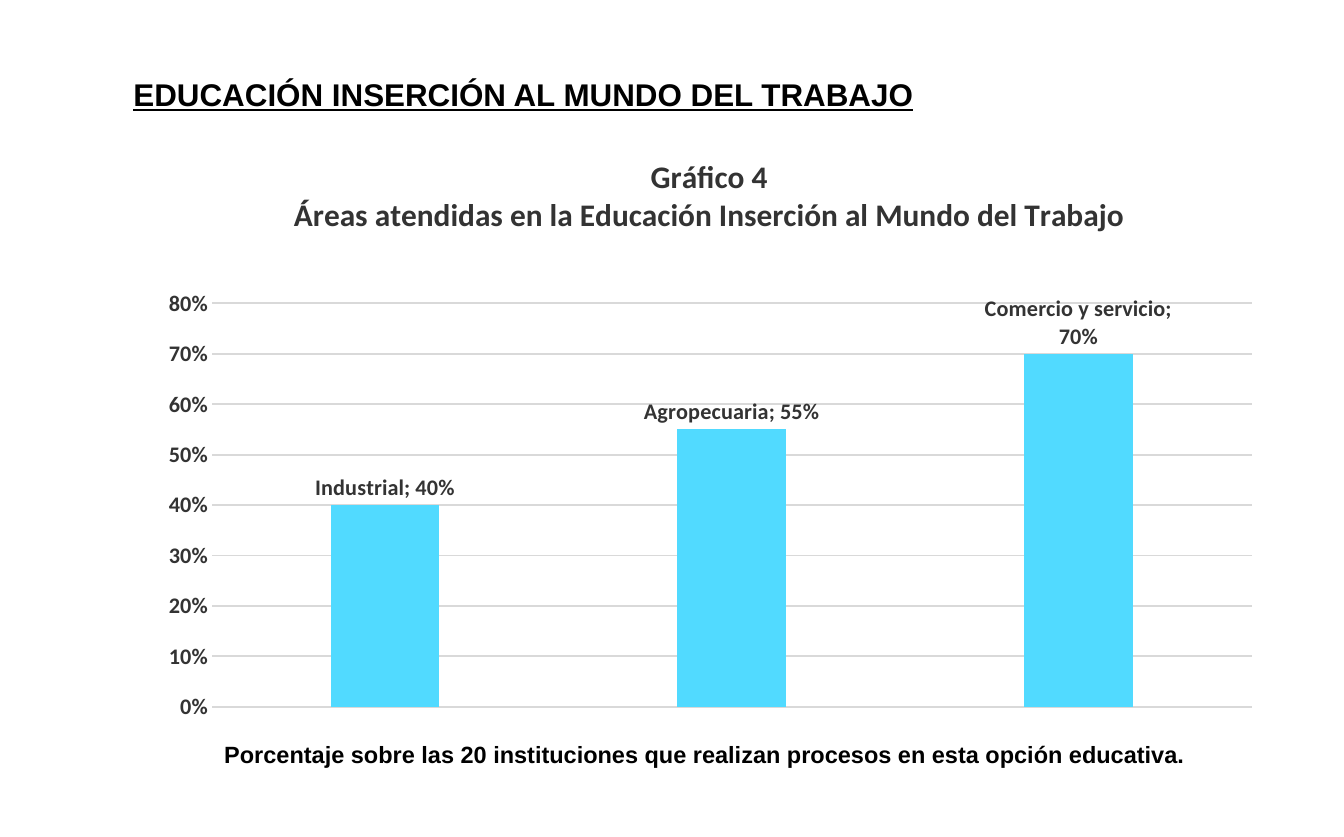
import pptx
import pptx.chart.data
import pptx.dml.color
import pptx.enum.chart
import pptx.enum.text
import pptx.oxml
import pptx.util
from dataclasses import dataclass

Inches = pptx.util.Inches
Pt = pptx.util.Pt


@dataclass(frozen=True)
class Theme:
    text_font: str = "Arial"
    chart_font: str = "Calibri"
    ink: str = "000000"
    chart_ink: str = "333333"
    bar: str = "51DAFF"
    grid: str = "D9D9D9"
    heading_size: float = 24
    caption_size: float = 18
    label_size: float = 17
    grid_width: float = 1.41


class SlideBuilder:
    def __init__(self, slide, theme):
        self.slide = slide
        self.theme = theme

    def style(self, font, name, size, color):
        font.name = name
        font.size = Pt(size)
        font.bold = True
        font.color.rgb = pptx.dml.color.RGBColor.from_string(color)

    def text(self, words, box, size, align=None, indent=0, underline=None):
        frame = self.slide.shapes.add_textbox(*map(Inches, box)).text_frame
        frame.word_wrap = True
        paragraph = frame.paragraphs[0]
        paragraph.text = words
        paragraph.alignment = align
        if indent:
            paragraph._p.get_or_add_pPr().set("marL", str(Inches(indent)))
            paragraph.line_spacing = 1.15
        self.style(paragraph.font, self.theme.text_font, size, self.theme.ink)
        paragraph.font.underline = underline

    def column_chart(self, title, areas, box, plot_area):
        theme = self.theme
        data = pptx.chart.data.CategoryChartData(number_format="0%")
        data.categories = list(areas)
        data.add_series("Series 1", list(areas.values()))
        chart = self.slide.shapes.add_chart(
            pptx.enum.chart.XL_CHART_TYPE.COLUMN_CLUSTERED, *map(Inches, box), data
        ).chart
        self.style(chart.font, theme.chart_font, theme.label_size, theme.chart_ink)
        chart.has_legend = False
        chart.has_title = True
        chart.chart_title.text_frame.text = title
        for line in chart.chart_title.text_frame.paragraphs:
            self.style(line.font, theme.chart_font, theme.heading_size, theme.chart_ink)

        chart.category_axis.visible = False
        percent_axis = chart.value_axis
        percent_axis.minimum_scale = 0
        percent_axis.maximum_scale = 0.8
        percent_axis.major_unit = 0.1
        percent_axis.major_tick_mark = pptx.enum.chart.XL_TICK_MARK.NONE
        percent_axis.format.line.fill.background()
        percent_axis.tick_labels.number_format = "0%"
        percent_axis.tick_labels.number_format_is_linked = False
        self.style(percent_axis.tick_labels.font, theme.chart_font, theme.label_size, theme.chart_ink)
        grid = percent_axis.major_gridlines.format.line
        grid.color.rgb = pptx.dml.color.RGBColor.from_string(theme.grid)
        grid.width = Pt(theme.grid_width)

        plot = chart.plots[0]
        plot.vary_by_categories = False
        plot.gap_width = 219
        plot.overlap = -27
        columns = plot.series[0]
        columns.format.fill.solid()
        columns.format.fill.fore_color.rgb = pptx.dml.color.RGBColor.from_string(theme.bar)
        labels = columns.data_labels
        labels.show_value = True
        labels.show_category_name = True
        labels.number_format = "0%"
        labels.number_format_is_linked = False
        labels.position = pptx.enum.chart.XL_LABEL_POSITION.OUTSIDE_END
        self.style(labels.font, theme.chart_font, theme.label_size, theme.chart_ink)
        namespace = pptx.oxml.ns.nsdecls("c")
        separator = pptx.oxml.parse_xml(f"<c:separator {namespace}>; </c:separator>")
        labels._element.find(pptx.oxml.ns.qn("c:showBubbleSize")).addnext(separator)

        sizes = "".join(f'<c:{key} val="{share}"/>' for key, share in zip("xywh", plot_area))
        layout = pptx.oxml.parse_xml(
            f'<c:layout {namespace}><c:manualLayout><c:layoutTarget val="inner"/>'
            f'<c:xMode val="edge"/><c:yMode val="edge"/>{sizes}</c:manualLayout></c:layout>'
        )
        area = chart._chartSpace.chart.plotArea
        for automatic in area.findall(pptx.oxml.ns.qn("c:layout")):
            area.remove(automatic)
        area.insert(0, layout)


def main():
    deck = pptx.Presentation()
    deck.slide_width = Inches(14.29)
    deck.slide_height = Inches(8.9)
    theme = Theme()
    builder = SlideBuilder(deck.slides.add_slide(deck.slide_layouts[6]), theme)
    builder.text(
        "Porcentaje sobre las 20 instituciones que realizan procesos en esta opción educativa.",
        (1.53, 7.77, 11.42, 0.77),
        theme.caption_size,
        align=pptx.enum.text.PP_ALIGN.CENTER,
        indent=0.5,
    )
    builder.column_chart(
        "Gráfico 4\nÁreas atendidas en la Educación Inserción al Mundo del Trabajo",
        {"Industrial": 0.4, "Agropecuaria": 0.55, "Comercio y servicio": 0.7},
        (1.53, 1.46, 12.02, 6.31),
        (0.06, 0.28, 0.92, 0.68),
    )
    builder.text(
        "EDUCACIÓN INSERCIÓN AL MUNDO DEL TRABAJO",
        (1.32, 0.75, 10.79, 0.5),
        theme.heading_size,
        underline=True,
    )
    deck.save("out.pptx")


if __name__ == "__main__":
    main()
